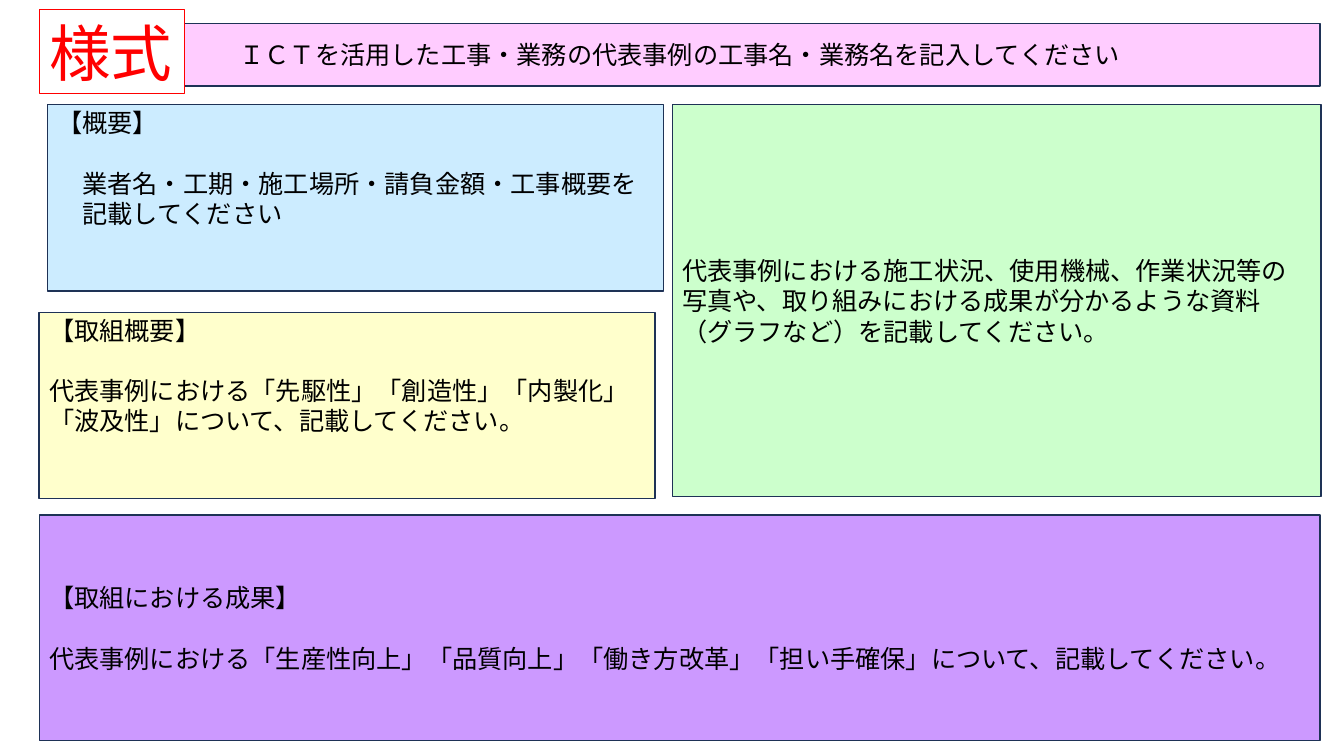
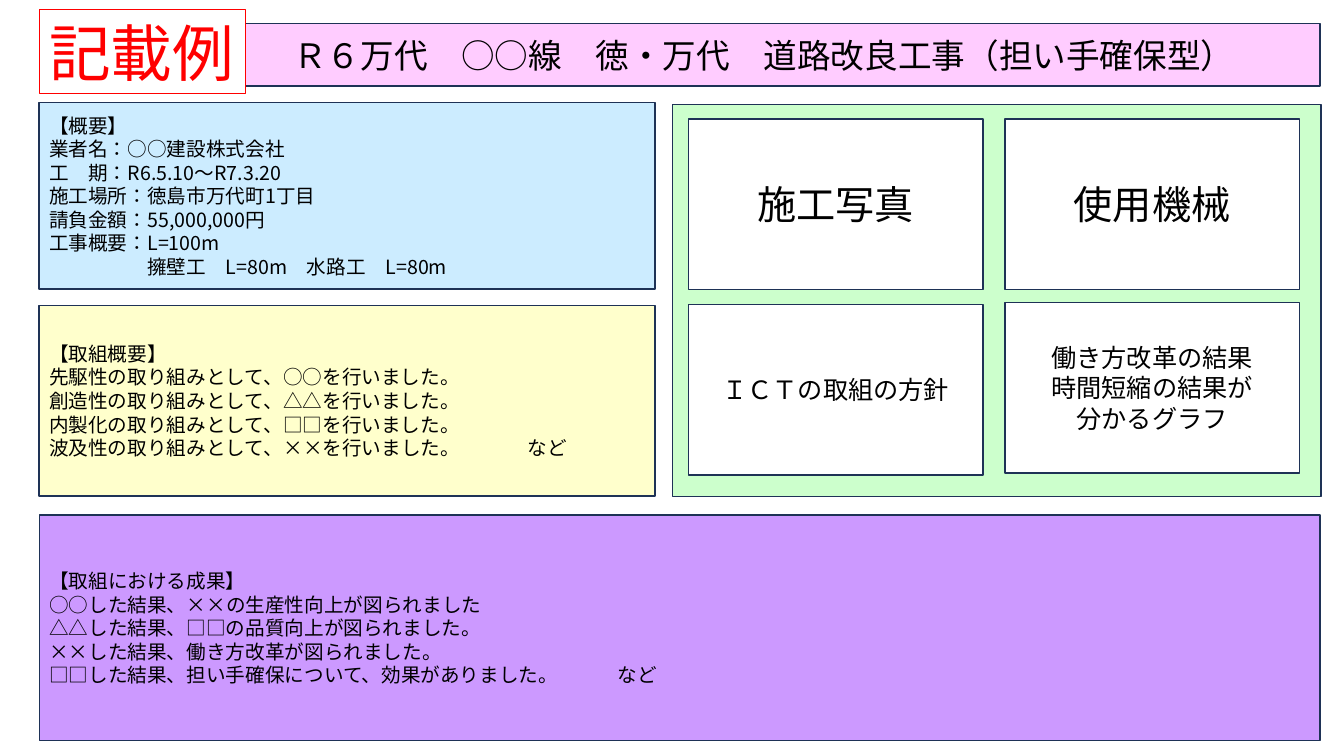
import pptx
import pptx.util
import pptx.dml.color
import pptx.enum.shapes
import pptx.enum.text
import pptx.oxml.ns
import lxml.etree

Pt = pptx.util.Pt
ALIGN = pptx.enum.text.PP_ALIGN
ANCHOR = pptx.enum.text.MSO_ANCHOR
FONT = "Noto Sans CJK JP"
PINK, BLUE, YELLOW = "FFCCFF", "CCECFF", "FFFFCC"
PURPLE, GREEN, WHITE = "CC99FF", "CCFFCC", "FFFFFF"
NAVY, RED, BLACK = "1E3256", "FF0000", "000000"
LINE_HEIGHT = 1.2

TITLE_BAND = (28, 16.8, 915, 44.6)
RESULT_PANEL = (28, 368, 915, 161)
MATERIAL_PANEL = (480.2, 74.8, 463.4, 280)


def colour(value):
    return pptx.dml.color.RGBColor.from_string(value)


def add_box(page, bounds, fill, lines, size, align=ALIGN.LEFT, ink=BLACK, edge=NAVY, weight=1):
    box = page.shapes.add_shape(
        pptx.enum.shapes.MSO_SHAPE.RECTANGLE, *[Pt(length) for length in bounds])
    box.shadow.inherit = False
    box.fill.solid()
    box.fill.fore_color.rgb = colour(fill)
    box.line.color.rgb = colour(edge)
    box.line.width = Pt(weight)
    frame = box.text_frame
    frame.word_wrap = True
    frame.vertical_anchor = ANCHOR.MIDDLE
    for index, line in enumerate(lines):
        para = frame.paragraphs[0] if index == 0 else frame.add_paragraph()
        para.text = line
        para.alignment = align
        para.line_spacing = Pt(round(size * LINE_HEIGHT, 1))
        para.font.size = Pt(size)
        para.font.color.rgb = colour(ink)
        para.font.name = FONT
        defaults = para._p.pPr.find(pptx.oxml.ns.qn("a:defRPr"))
        defaults.set("lang", "ja-JP")
        lxml.etree.SubElement(defaults, pptx.oxml.ns.qn("a:ea"), typeface=FONT)
    return frame


deck = pptx.Presentation()
deck.slide_width = Pt(960)
deck.slide_height = Pt(540)
blank = deck.slide_layouts[6]

form = deck.slides.add_slide(blank)
add_box(form, TITLE_BAND, PINK,
        ["ＩＣＴを活用した工事・業務の代表事例の工事名・業務名を記入してください"], 18, ALIGN.CENTER)
overview = add_box(form, (33.8, 74.8, 440, 133.2), BLUE,
                   ["【概要】", "業者名・工期・施工場所・請負金額・工事概要を", "記載してください"], 18)
efforts = add_box(form, (28, 223, 440, 133.2), YELLOW,
                  ["【取組概要】",
                   "代表事例における「先駆性」「創造性」「内製化」「波及性」について、記載してください。"], 18)
results = add_box(form, RESULT_PANEL, PURPLE,
                  ["【取組における成果】",
                   "代表事例における「生産性向上」「品質向上」「働き方改革」「担い手確保」について、記載してください。"], 18)
add_box(form, MATERIAL_PANEL, GREEN,
        ["代表事例における施工状況、使用機械、作業状況等の写真や、取り組みにおける成果が分かるような資料（グラフなど）を記載してください。"], 18)

for frame in (overview, efforts, results):
    frame.paragraphs[0].space_after = Pt(21.6)
for frame in (overview, efforts):
    frame.vertical_anchor = ANCHOR.TOP
    frame.margin_top = Pt(2)
for para in overview.paragraphs[1:]:
    para._p.pPr.set("marL", str(Pt(18)))

example = deck.slides.add_slide(blank)
title = add_box(example, TITLE_BAND, PINK,
                ["Ｒ６万代　○○線　徳・万代　道路改良工事（担い手確保型）"], 24, ALIGN.CENTER)
title.margin_left = Pt(127.2)
overview = add_box(example, (28, 73.4, 440, 133.2), BLUE,
                   ["【概要】", "業者名：○○建設株式会社", "工　期：R6.5.10～R7.3.20",
                    "施工場所：徳島市万代町1丁目", "請負金額：55,000,000円", "工事概要：L=100m",
                    "擁壁工　L=80m　水路工　L=80m"], 14)
overview.paragraphs[-1]._p.pPr.set("marL", str(Pt(70)))
efforts = add_box(example, (28, 218.2, 440, 136), YELLOW,
                  ["【取組概要】", "先駆性の取り組みとして、○○を行いました。",
                   "創造性の取り組みとして、△△を行いました。",
                   "内製化の取り組みとして、□□を行いました。",
                   "波及性の取り組みとして、××を行いました。\tなど"], 14)
results = add_box(example, RESULT_PANEL, PURPLE,
                  ["【取組における成果】", "○○した結果、××の生産性向上が図られました",
                   "△△した結果、□□の品質向上が図られました。",
                   "××した結果、働き方改革が図られました。",
                   "□□した結果、担い手確保について、効果がありました。\tなど"], 14)
for frame, stop in ((efforts, 342), (results, 406)):
    defaults = frame.paragraphs[-1]._p.pPr.find(pptx.oxml.ns.qn("a:defRPr"))
    tabs = lxml.etree.Element(pptx.oxml.ns.qn("a:tabLst"))
    lxml.etree.SubElement(tabs, pptx.oxml.ns.qn("a:tab"), pos=str(Pt(stop)), algn="l")
    defaults.addprevious(tabs)

add_box(example, MATERIAL_PANEL, GREEN, [], 18)
for left, top, size, lines in (
    (491.8, 85, 28, ["施工写真"]),
    (491.8, 217.4, 18, ["ＩＣＴの取組の方針"]),
    (717.8, 216, 18, ["働き方改革の結果", "時間短縮の結果が", "分かるグラフ"]),
    (717.8, 85, 28, ["使用機械"]),
):
    add_box(example, (left, top, 210.4, 121.8), WHITE, lines, size, ALIGN.CENTER)

for page, word, width in ((form, "様式", 103.7), (example, "記載例", 147.6)):
    label = add_box(page, (28, 6.6, width, 60.4), WHITE, [word], 44, ink=RED, edge=RED, weight=0.75)
    label.word_wrap = False

deck.save("out.pptx")
